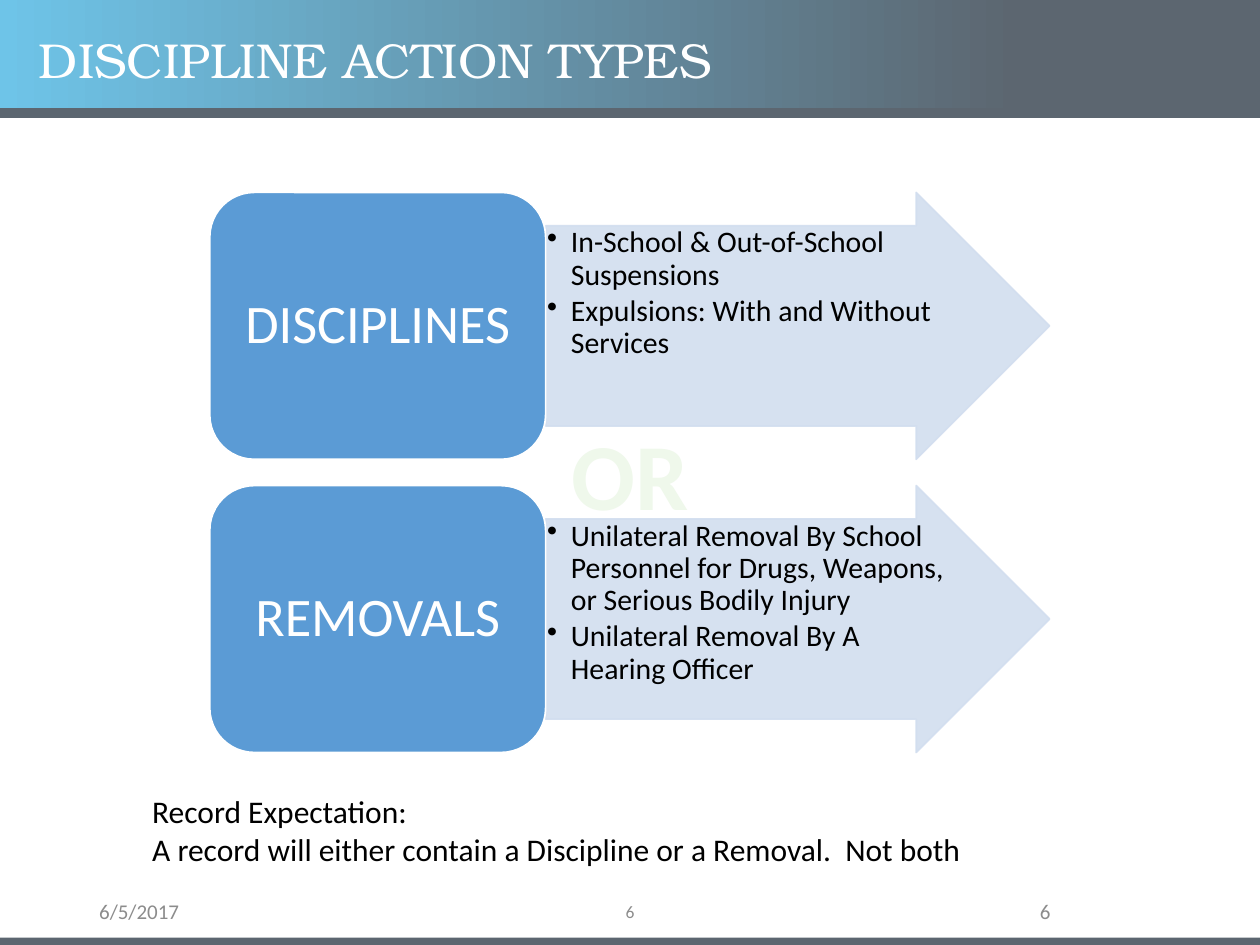
from dataclasses import dataclass

from lxml import etree
from pptx import Presentation
from pptx.dml.color import RGBColor
from pptx.enum.shapes import MSO_SHAPE
from pptx.enum.text import MSO_ANCHOR, PP_ALIGN
from pptx.oxml.ns import qn
from pptx.util import Cm, Pt

LEFT, CENTER, RIGHT = PP_ALIGN.LEFT, PP_ALIGN.CENTER, PP_ALIGN.RIGHT
TOP, MIDDLE = MSO_ANCHOR.TOP, MSO_ANCHOR.MIDDLE
RECTANGLE, ROUNDED, ARROW = MSO_SHAPE.RECTANGLE, MSO_SHAPE.ROUNDED_RECTANGLE, MSO_SHAPE.RIGHT_ARROW


@dataclass(frozen=True)
class Theme:
    body_font: str = "Calibri"
    title_font: str = "TeX Gyre Bonum"
    sky: str = "6EC4E8"
    slate: str = "5C6670"
    blue: str = "5B9BD5"
    pale_blue: str = "D2DEEF"
    pale_green: str = "EFF8EB"
    gray: str = "8C8C8C"
    white: str = "FFFFFF"
    black: str = "000000"
    title_size: int = 28
    label_size: int = 31
    bullet_size: int = 17
    or_size: int = 54
    note_size: int = 18
    footer_size: int = 12
    page_size: int = 10


theme = Theme()


def add_span(para, text, size, color, font=theme.body_font, bold=False):
    span = para.add_run()
    span.text = text
    span.font.name = font
    span.font.size = Pt(size)
    span.font.bold = bold
    span.font.color.rgb = RGBColor.from_string(color)


def add_block(page, kind, left, top, width, height, color, line_color=None):
    """Add a flat preset shape, measured in centimetres."""
    shape = page.shapes.add_shape(kind, Cm(left), Cm(top), Cm(width), Cm(height))
    shape.shadow.inherit = False
    shape.fill.solid()
    shape.fill.fore_color.rgb = RGBColor.from_string(color)
    if line_color:
        shape.line.color.rgb = RGBColor.from_string(line_color)
        shape.line.width = Pt(1)
    else:
        shape.line.fill.background()
    return shape


deck = Presentation()
deck.slide_width, deck.slide_height = Cm(25.4), Cm(19.05)
page = deck.slides.add_slide(deck.slide_layouts[5])

# Header and footer bands
header = add_block(page, RECTANGLE, 0, 0, 25.4, 2.2, theme.slate)
header.fill.gradient()
header.fill.gradient_angle = 0
for stop, (position, color) in zip(header.fill.gradient_stops, ((0, theme.sky), (0.81, theme.slate))):
    stop.position = position
    stop.color.rgb = RGBColor.from_string(color)
for band_top in (2.18, 18.9):
    add_block(page, RECTANGLE, 0, band_top, 25.4, 0.2, theme.slate)

# Title, brought in front of the header band
title = page.shapes.title
page.shapes._spTree.append(title._element)
title.left, title.top, title.width, title.height = Cm(0.53), Cm(0.53), Cm(21.9), Cm(1.45)
title.text_frame.vertical_anchor = MIDDLE
para = title.text_frame.paragraphs[0]
para.alignment = LEFT
para.line_spacing = 0.9
add_span(para, "DISCIPLINE ACTION TYPES", theme.title_size, theme.white, theme.title_font)

# Action types: a label box and an arrow listing its cases
action_types = (
    ("DISCIPLINES", ("In-School & Out-of-School Suspensions",
                     "Expulsions: With and Without Services")),
    ("REMOVALS", ("Unilateral Removal By School Personnel for Drugs, Weapons, or Serious Bodily Injury",
                  "Unilateral Removal By A Hearing Officer")),
)
row_top, row_height, row_pitch = 3.88, 5.38, 5.91
box_left, box_width, arrow_width = 4.23, 6.77, 10.16

for row, (label, cases) in enumerate(action_types):
    top = row_top + row * row_pitch

    arrow = add_block(page, ARROW, box_left + box_width, top, arrow_width, row_height,
                      theme.pale_blue, theme.pale_blue)
    arrow.adjustments[0], arrow.adjustments[1] = 0.75, 0.5
    for color_element in arrow._element.spPr.iter(qn("a:srgbClr")):
        etree.SubElement(color_element, qn("a:alpha"), val="90000")
    frame = arrow.text_frame
    frame.word_wrap = True
    frame.vertical_anchor = TOP
    frame.margin_left = frame.margin_right = frame.margin_top = frame.margin_bottom = Cm(0.03)
    for index, case in enumerate(cases):
        para = frame.add_paragraph() if index else frame.paragraphs[0]
        para.alignment = LEFT
        para.line_spacing = 0.9
        para.space_after = Pt(2.5)
        properties = para._p.get_or_add_pPr()
        properties.set("marL", str(Cm(0.48)))
        properties.set("indent", str(-Cm(0.48)))
        etree.SubElement(properties, qn("a:buChar"), char="•")
        add_span(para, case, theme.bullet_size, theme.black)

    box = add_block(page, ROUNDED, box_left, top, box_width, row_height, theme.blue, theme.white)
    frame = box.text_frame
    frame.word_wrap = True
    frame.vertical_anchor = MIDDLE
    frame.margin_left = frame.margin_right = Cm(0.33)
    frame.margin_top = frame.margin_bottom = Cm(0.15)
    para = frame.paragraphs[0]
    para.alignment = CENTER
    para.line_spacing = 0.9
    add_span(para, label, theme.label_size, theme.white)

# Word between the rows, note and footer
texts = (
    (11.18, 8.26, 3.05, 2.57, TOP, CENTER, ("OR",), theme.or_size, theme.pale_green, True),
    (2.82, 15.85, 20.32, 2.57, TOP, LEFT,
     ("Record Expectation:", "A record will either contain a Discipline or a Removal.  Not both"),
     theme.note_size, theme.black, False),
    (1.75, 18.08, 5.72, 0.58, MIDDLE, LEFT, ("6/5/2017",), theme.footer_size, theme.gray, False),
    (8.41, 18.08, 8.58, 0.58, MIDDLE, CENTER, ("6",), theme.page_size, theme.gray, False),
    (17.93, 18.08, 3.5, 0.58, MIDDLE, RIGHT, ("6",), theme.footer_size, theme.gray, False),
)
for left, top, width, height, anchor, alignment, lines, size, color, bold in texts:
    box = page.shapes.add_textbox(Cm(left), Cm(top), Cm(width), Cm(height))
    frame = box.text_frame
    frame.word_wrap = True
    frame.vertical_anchor = anchor
    for index, line in enumerate(lines):
        para = frame.add_paragraph() if index else frame.paragraphs[0]
        para.alignment = alignment
        add_span(para, line, size, color, bold=bold)

deck.save("out.pptx")
